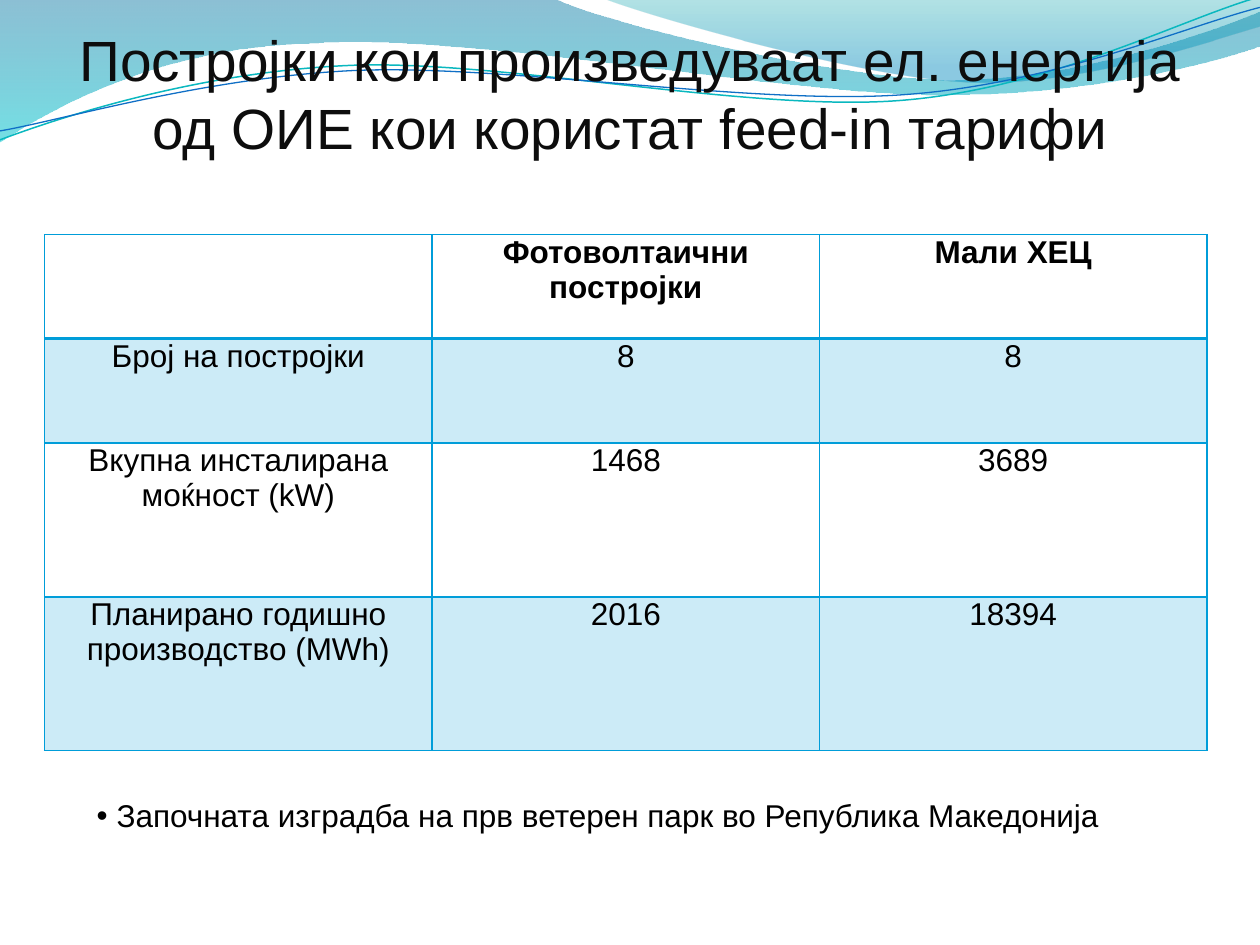
from lxml import etree
from pptx import Presentation, util as u
from pptx.dml.color import RGBColor
from pptx.enum import text
from pptx.oxml.ns import qn

FONT = "Arial"
BLUE = "009DD9"
BLACK = "000000"

# Each curve: start point, then end points (2 numbers) or Béziers (6), in cm
BACK_WAVE = [(0, 0), (11.18, -0.03),
             (12.09, 0.43, 16.87, 1.6, 19.25, 1.6),
             (21.67, 1.6, 24.33, 0.66, 25.4, 0.23), (25.43, 0.91),
             (24.97, 1.12, 22.1, 1.93, 18.95, 1.91),
             (15.8, 1.91, 9.7, 0.71, 6.53, 0.86),
             (3.28, 0.91, 1.17, 2.11, -0.03, 2.87), (0, 0)]
RIGHT_WAVE = [(12.17, -0.03), (12.93, 0.28, 17.32, 1.57, 19.53, 1.65),
              (21.74, 1.75, 24.41, 0.81, 25.4, 0.53), (25.4, 0),
              (12.17, -0.03)]
TEAL_LINE = [(0, 2.82), (1.22, 2.36, 4.01, 1.45, 7.04, 1.32),
             (10.03, 1.19, 15.06, 2.26, 18.11, 2.03),
             (21.16, 1.8, 23.83, 0.38, 25.35, -0.05)]
BLUE_LINE = [(0, 2.64), (1.19, 2.44, 4.17, 1.55, 7.19, 1.42),
             (10.24, 1.3, 15.16, 2.13, 18.21, 1.91),
             (21.23, 1.7, 23.9, 0.53, 25.4, 0.15)]

PLANTS = [("", "Фотоволтаични постројки", "Мали ХЕЦ"),
          ("Број на постројки", "8", "8"),
          ("Вкупна инсталирана моќност (kW)", "1468", "3689"),
          ("Планирано годишно производство (MWh)", "2016", "18394")]


def color(value):
    return RGBColor.from_string(value)


def set_alpha(srgb, percent):
    etree.SubElement(srgb, qn("a:alpha"), val=str(percent * 1000))


def style(paragraph, size, ink=BLACK, bold=False, align=None):
    paragraph.alignment = align
    font = paragraph.font
    font.name, font.size, font.bold = FONT, u.Pt(size), bold
    font.color.rgb = color(ink)


def add_curve(slide, left, top, curve, close):
    """Draw the outline through the end points, then bend its segments."""
    points = [(u.Cm(left + part[-2]), u.Cm(top + part[-1])) for part in curve]
    builder = slide.shapes.build_freeform(*points[0])
    builder.add_line_segments(points[1:], close=close)
    shape = builder.convert_to_shape()
    shape.shadow.inherit = False
    segments = list(shape._element.spPr.iter(qn("a:lnTo")))
    for segment, part in zip(segments, curve[1:]):
        if len(part) == 2:
            continue
        bend = etree.Element(qn("a:cubicBezTo"))
        for x, y in zip(part[::2], part[1::2]):
            etree.SubElement(bend, qn("a:pt"),
                             x=str(u.Cm(left + x) - shape.left),
                             y=str(u.Cm(top + y) - shape.top))
        segment.getparent().replace(segment, bend)
    return shape


def add_waves(slide, left, top):
    # Translucent waves, shaded from top to bottom: position, colour, opacity
    for curve, stops in (
            (BACK_WAVE, [(0, "0074A1", 45), (1, "00C6CF", 55)]),
            (RIGHT_WAVE, [(0, "00A1A9", 30), (0.8, "008BBF", 45)])):
        wave = add_curve(slide, left, top, curve, True)
        wave.line.fill.background()
        wave.fill.gradient()
        wave.fill.gradient_angle = 270
        for stop, (position, tint, _) in zip(wave.fill.gradient_stops, stops):
            stop.position = position
            stop.color.rgb = color(tint)
        gradient = wave._element.spPr.find(qn("a:gradFill"))
        for srgb, (_, _, opacity) in zip(gradient.iter(qn("a:srgbClr")), stops):
            set_alpha(srgb, opacity)

    # Thin lines over the waves
    for curve, ink, width in ((TEAL_LINE, "0AB8BF", 0.85),
                              (BLUE_LINE, "0F6FC6", 0.75)):
        strand = add_curve(slide, left, top, curve, False)
        strand.fill.background()
        strand.line.color.rgb = color(ink)
        strand.line.width = u.Pt(width)


def add_title(slide, left, top, width, height):
    box = slide.shapes.add_textbox(*map(u.Cm, (left, top, width, height)))
    frame = box.text_frame
    frame.word_wrap = True
    frame.vertical_anchor = text.MSO_ANCHOR.BOTTOM
    frame.margin_left = frame.margin_right = frame.margin_top = 0
    frame.margin_bottom = u.Cm(1.9)
    title = frame.paragraphs[0]
    title.text = ("Постројки кои произведуваат ел. енергија "
                  "од ОИЕ кои користат feed-in тарифи")
    style(title, 32.4, "0D0D0D", align=text.PP_ALIGN.CENTER)


def add_borders(cell, widths):
    properties = cell._tc.get_or_add_tcPr()
    for index, (side, width) in enumerate(widths.items()):
        line = etree.Element(qn(f"a:ln{side}"), w=str(u.Pt(width)))
        fill = etree.SubElement(line, qn("a:solidFill"))
        etree.SubElement(fill, qn("a:srgbClr"), val=BLUE)
        properties.insert(index, line)


def add_plant_table(slide, left, top, width, heights):
    frame = slide.shapes.add_table(len(PLANTS), len(PLANTS[0]), u.Cm(left),
                                   u.Cm(top), u.Cm(width), u.Cm(sum(heights)))
    table = frame.table
    table.first_row = table.horz_banding = False
    for r, (height, labels) in enumerate(zip(heights, PLANTS)):
        table.rows[r].height = u.Cm(height)
        for c, label in enumerate(labels):
            cell = table.cell(r, c)
            cell.margin_left = cell.margin_right = u.Cm(0.18)
            cell.margin_top = cell.margin_bottom = 0
            cell.text = label
            style(cell.text_frame.paragraphs[0], 18, bold=r == 0,
                  align=text.PP_ALIGN.CENTER)
            # Every second row is tinted
            if r % 2:
                cell.fill.solid()
                cell.fill.fore_color.rgb = color(BLUE)
                set_alpha(next(cell._tc.tcPr.iter(qn("a:srgbClr"))), 20)
            else:
                cell.fill.background()
            # A thicker rule parts the header from the rows
            add_borders(cell, {"L": 1, "R": 1, "T": 2 if r == 1 else 1,
                               "B": 2 if r == 0 else 1})


def add_note(slide, left, top, width, height):
    box = slide.shapes.add_textbox(*map(u.Cm, (left, top, width, height)))
    box.text_frame.word_wrap = True
    note = box.text_frame.paragraphs[0]
    note.text = "Започната изградба на прв ветерен парк во Република Македонија"
    style(note, 18)
    # Hanging bullet
    properties = note._p.get_or_add_pPr()
    indent = u.Cm(0.4)
    properties.set("marL", str(indent))
    properties.set("indent", str(-indent))
    properties.insert(0, etree.Element(qn("a:buFont"), typeface=FONT))
    properties.insert(1, etree.Element(qn("a:buChar"), char="•"))


def main():
    deck = Presentation()
    deck.slide_width, deck.slide_height = u.Cm(25.4), u.Cm(19.05)
    slide = deck.slides.add_slide(deck.slide_layouts[6])
    add_waves(slide, 0, 0)
    add_title(slide, 1.27, 1.96, 22.86, 3.18)
    add_plant_table(slide, 0.9, 4.73, 23.43, (2.1, 2.1, 3.1, 3.1))
    add_note(slide, 1.7, 15.93, 22.4, 1.02)
    deck.save("out.pptx")


if __name__ == "__main__":
    main()
